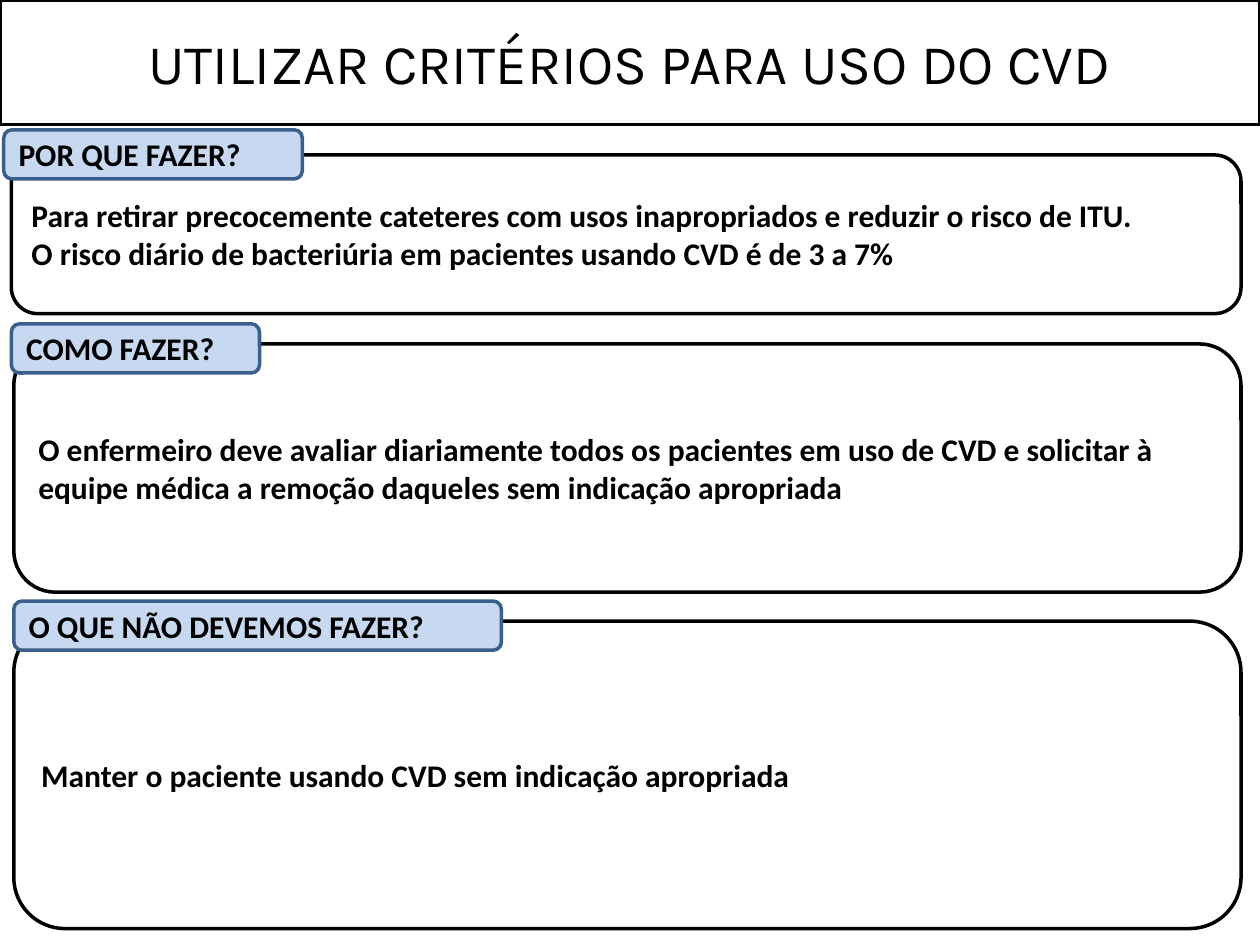
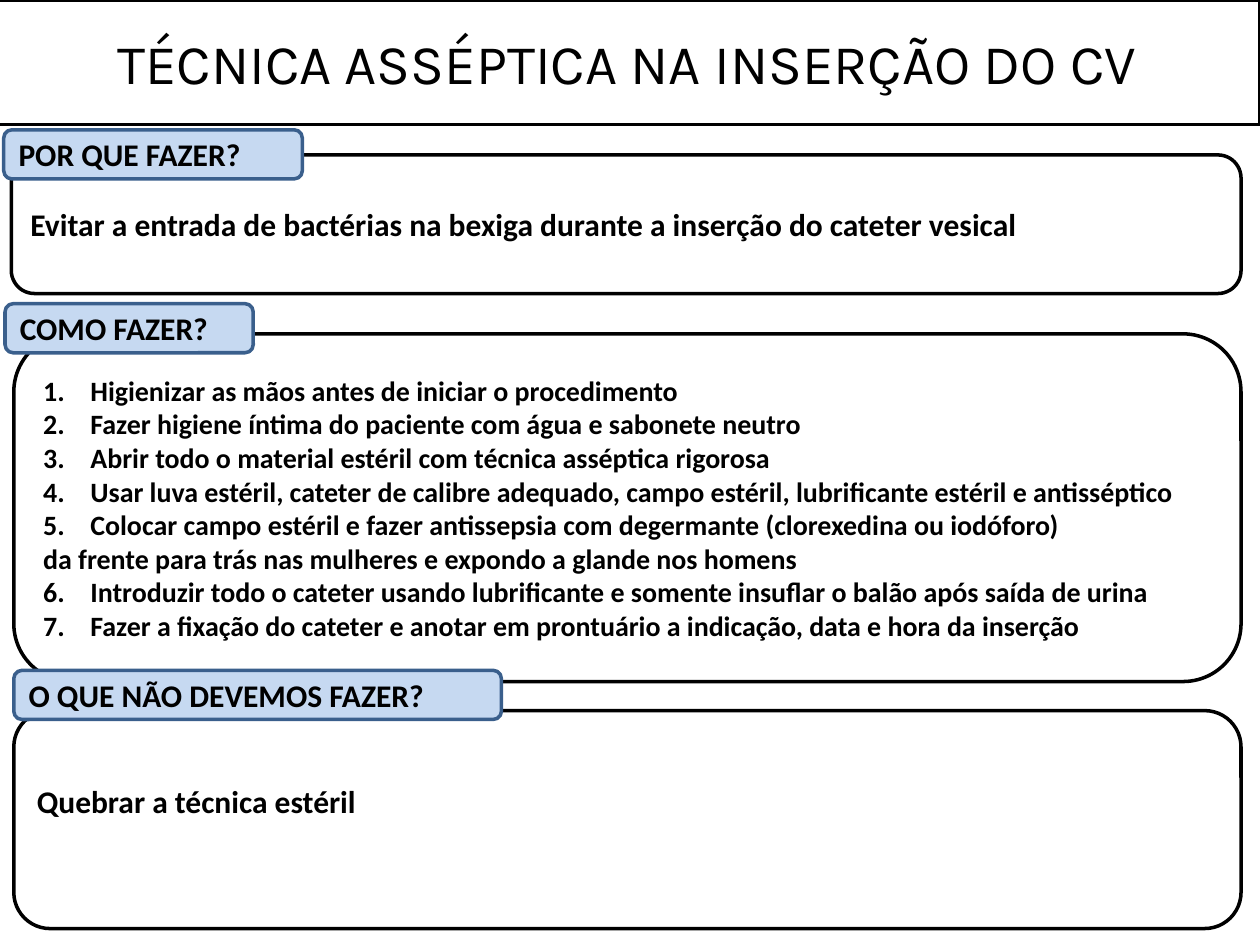
from lxml.etree import SubElement
from pptx import Presentation
from pptx.dml.color import RGBColor
from pptx.enum.shapes import MSO_SHAPE
from pptx.enum.text import MSO_ANCHOR, PP_ALIGN
from pptx.oxml.ns import qn
from pptx.util import Inches, Pt

COLORS = {"ink": "000000", "paper": "FFFFFF", "label": "C6D9F1", "label_line": "3A5F8C"}

presentation = Presentation()
presentation.slide_width = Inches(10)
presentation.slide_height = Inches(7.5)

# Grid of 100 columns by 75 rows
COLUMN = presentation.slide_width / 100
ROW = presentation.slide_height / 75
TITLE_HEIGHT = 9.9
LABEL_HEIGHT = 3.9
PANEL_RIGHT = 98.5

# Label text and width, panel left: the same three sections on every slide
SECTIONS = [
    ("POR QUE FAZER?", 23.7, 0.9),
    ("COMO FAZER?", 19.7, 1.1),
    ("O QUE NÃO DEVEMOS FAZER?", 38.7, 1.1),
]


def add_box(slide, lines, left, top, width, height, kind=MSO_SHAPE.ROUNDED_RECTANGLE,
            fill="paper", line="ink", font="Calibri", size=18, bold=True,
            align=PP_ALIGN.LEFT, raise_by=0):
    """Add an outlined box; a line given as (number, text) is a numbered item."""
    shape = slide.shapes.add_shape(kind, round(left * COLUMN), round(top * ROW),
                                   round(width * COLUMN), round(height * ROW))
    shape.shadow.inherit = False
    shape.fill.solid()
    shape.fill.fore_color.rgb = RGBColor.from_string(COLORS[fill])
    shape.line.color.rgb = RGBColor.from_string(COLORS[line])
    shape.line.width = Pt(2)
    frame = shape.text_frame
    frame.word_wrap = True
    frame.vertical_anchor = MSO_ANCHOR.MIDDLE
    frame.margin_bottom = Inches(0.05) + round(raise_by * ROW)
    for index, entry in enumerate(lines):
        paragraph = frame.add_paragraph() if index else frame.paragraphs[0]
        paragraph.alignment = align
        start, text = entry if isinstance(entry, tuple) else (None, entry)
        if start:
            properties = paragraph._p.get_or_add_pPr()
            properties.set("marL", str(Inches(0.375)))
            properties.set("indent", str(-Inches(0.375)))
            numbering = SubElement(properties, qn("a:buAutoNum"), type="arabicPeriod")
            if start > 1:
                numbering.set("startAt", str(start))
        run = paragraph.add_run()
        run.text = text
        run.font.name = font
        run.font.size = Pt(size)
        run.font.bold = bold
        run.font.color.rgb = RGBColor.from_string(COLORS["ink"])


# Each panel: label left, label top, panel top, panel height, lines, extra format
SLIDES = [
    ("UTILIZAR CRITÉRIOS PARA USO DO CVD", 0, [
        (0.3, 10.3, 12.3, 12.6, [
            "Para retirar precocemente cateteres com usos inapropriados e reduzir o risco de ITU.",
            "O risco diário de bacteriúria em pacientes usando CVD é de 3 a 7%",
        ], {}),
        (0.9, 25.7, 27.3, 19.7, [
            "O enfermeiro deve avaliar diariamente todos os pacientes em uso de CVD e solicitar à "
            "equipe médica a remoção daqueles sem indicação apropriada",
        ], {}),
        (1.1, 47.7, 49.3, 24.4, ["Manter o paciente usando CVD sem indicação apropriada"], {}),
    ]),
    ("TÉCNICA ASSÉPTICA NA INSERÇÃO DO CV", -0.4, [
        (0.3, 10.3, 12.3, 11, [
            "Evitar a entrada de bactérias na bexiga durante a inserção do cateter vesical",
        ], {}),
        (0.4, 24.1, 26.5, 27.6, [
            (1, "Higienizar as mãos antes de iniciar o procedimento"),
            (1, "Fazer higiene íntima do paciente com água e sabonete neutro"),
            (1, "Abrir todo o material estéril com técnica asséptica rigorosa"),
            (1, "Usar luva estéril, cateter de calibre adequado, campo estéril, "
                "lubrificante estéril e antisséptico"),
            (1, "Colocar campo estéril e fazer antissepsia com degermante "
                "(clorexedina ou iodóforo)"),
            "da frente para trás nas mulheres e expondo a glande nos homens",
            (6, "Introduzir todo o cateter usando lubrificante e somente insuflar o balão "
                "após saída de urina"),
            (6, "Fazer a fixação do cateter e anotar em prontuário a indicação, "
                "data e hora da inserção"),
        ], {"size": 16}),
        (1.1, 53.2, 56.4, 17.3, ["Quebrar a técnica estéril"], {"raise_by": 3}),
    ]),
]

for title, title_left, panels in SLIDES:
    slide = presentation.slides.add_slide(presentation.slide_layouts[6])

    # Title band
    add_box(slide, [title], title_left, 0, 100 - title_left, TITLE_HEIGHT,
            kind=MSO_SHAPE.RECTANGLE, font="Karla", size=32, bold=False,
            align=PP_ALIGN.CENTER)

    # Panels, each with its label over the top edge
    for section, panel in zip(SECTIONS, panels):
        label, label_width, panel_left = section
        label_left, label_top, panel_top, panel_height, lines, text_format = panel
        add_box(slide, lines, panel_left, panel_top, PANEL_RIGHT - panel_left,
                panel_height, **text_format)
        add_box(slide, [label], label_left, label_top, label_width, LABEL_HEIGHT,
                fill="label", line="label_line")

presentation.save("out.pptx")
